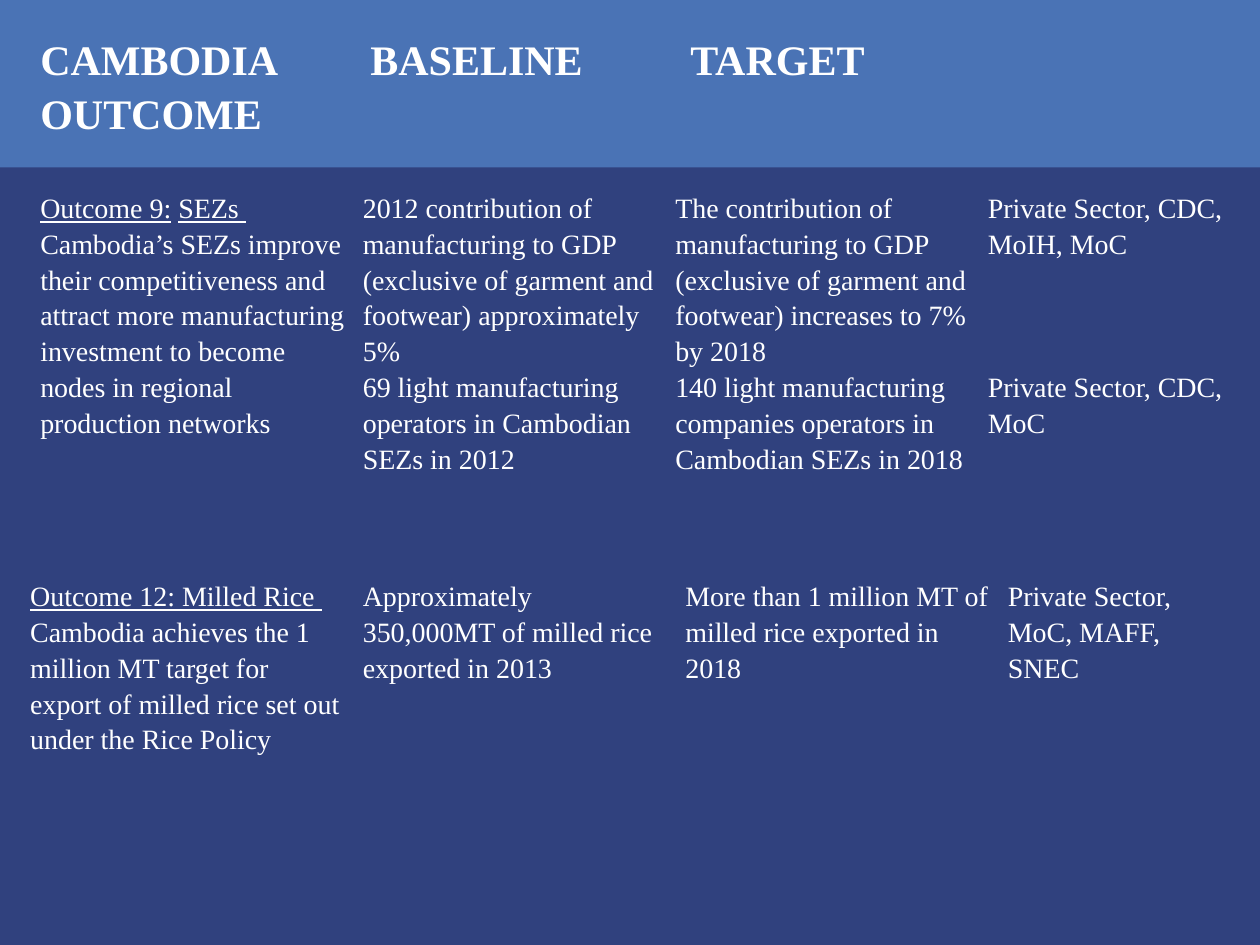
"""Build a slide of Cambodia outcomes with baselines, targets and partners."""
from pptx import Presentation, util as u
from pptx.dml.color import RGBColor
from pptx.enum import shapes

COLORS = {"background": "30417E", "band": "4A73B5", "text": "FFFFFF"}
NO_GRID = "{2D5ABB26-0587-4C30-8999-92F81FD0307C}"

deck = Presentation()
deck.slide_width, deck.slide_height = u.Inches(10), u.Inches(7.5)
slide = deck.slides.add_slide(deck.slide_layouts[6])
slide.background.fill.solid()
slide.background.fill.fore_color.rgb = RGBColor.from_string(COLORS["background"])

band = slide.shapes.add_shape(
    shapes.MSO_SHAPE.RECTANGLE, 0, 0, u.Inches(10), u.Inches(1.33))
band.shadow.inherit = False
band.fill.solid()
band.fill.fore_color.rgb = RGBColor.from_string(COLORS["band"])
band.line.fill.background()


def fill_cell(cell, paragraphs, size, bold):
    """Write paragraphs given as lists of (wording, underlined) runs."""
    cell.fill.background()
    cell.margin_left = cell.margin_right = u.Inches(0.07)
    cell.margin_top = cell.margin_bottom = 0
    for index, runs in enumerate(paragraphs):
        frame = cell.text_frame
        paragraph = frame.add_paragraph() if index else frame.paragraphs[0]
        paragraph.line_spacing = 1.15
        paragraph.font.name = "Times New Roman"
        paragraph.font.size = u.Pt(size)
        paragraph.font.bold = bold
        paragraph.font.color.rgb = RGBColor.from_string(COLORS["text"])
        for wording, underlined in runs:
            run = paragraph.add_run()
            run.text = wording
            if underlined:
                run.font.underline = True


def add_grid(left, top, widths, heights, rows, size=16, bold=False):
    """Add a table without grid lines and return it."""
    frame = slide.shapes.add_table(
        len(heights), len(widths), u.Inches(left), u.Inches(top),
        u.Inches(sum(widths)), u.Inches(sum(heights)))
    grid = frame.table
    grid.first_row = grid.horz_banding = False
    grid._tbl.tblPr.find("{*}tableStyleId").text = NO_GRID
    for column, width in zip(grid.columns, widths):
        column.width = u.Inches(width)
    for row, height, entries in zip(grid.rows, heights, rows):
        row.height = u.Inches(height)
        for cell, entry in zip(row.cells, entries):
            paragraphs = [[(entry, False)]] if isinstance(entry, str) else entry
            fill_cell(cell, paragraphs, size, bold)
    return grid


zones = add_grid(0.25, 1.5, [2.56, 2.48, 2.48, 2.06], [1.42, 1.65], [
    [[[("Outcome 9:", True), (" ", False), ("SEZs ", True)],
      [("Cambodia’s SEZs improve their competitiveness and attract more "
        "manufacturing investment to become nodes in regional production "
        "networks", False)]],
     "2012 contribution of manufacturing to GDP (exclusive of garment and "
     "footwear) approximately 5%",
     "The contribution of manufacturing to GDP (exclusive of garment and "
     "footwear) increases to 7% by 2018",
     "Private Sector, CDC, MoIH, MoC"],
    [[],
     "69 light manufacturing operators in Cambodian SEZs in 2012",
     "140 light manufacturing companies operators in Cambodian SEZs in 2018",
     "Private Sector, CDC, MoC"],
])
zones.cell(0, 0).merge(zones.cell(1, 0))

add_grid(0.17, 4.58, [2.64, 2.56, 2.56, 1.91], [1.53], [
    [[[("Outcome 12: Milled Rice ", True)],
      [("Cambodia achieves the 1 million MT target for export of milled rice "
        "set out under the Rice Policy", False)]],
     "Approximately 350,000MT of milled rice exported in 2013",
     "More than 1 million MT of milled rice exported in 2018",
     "Private Sector, MoC, MAFF, SNEC"],
])

add_grid(0.25, 0.25, [2.62, 2.54, 2.54, 1.89], [0.92], [
    [[[("CAMBODIA", False)], [("OUTCOME", False)]], "BASELINE", "TARGET", []],
], size=24, bold=True)

deck.save("out.pptx")
